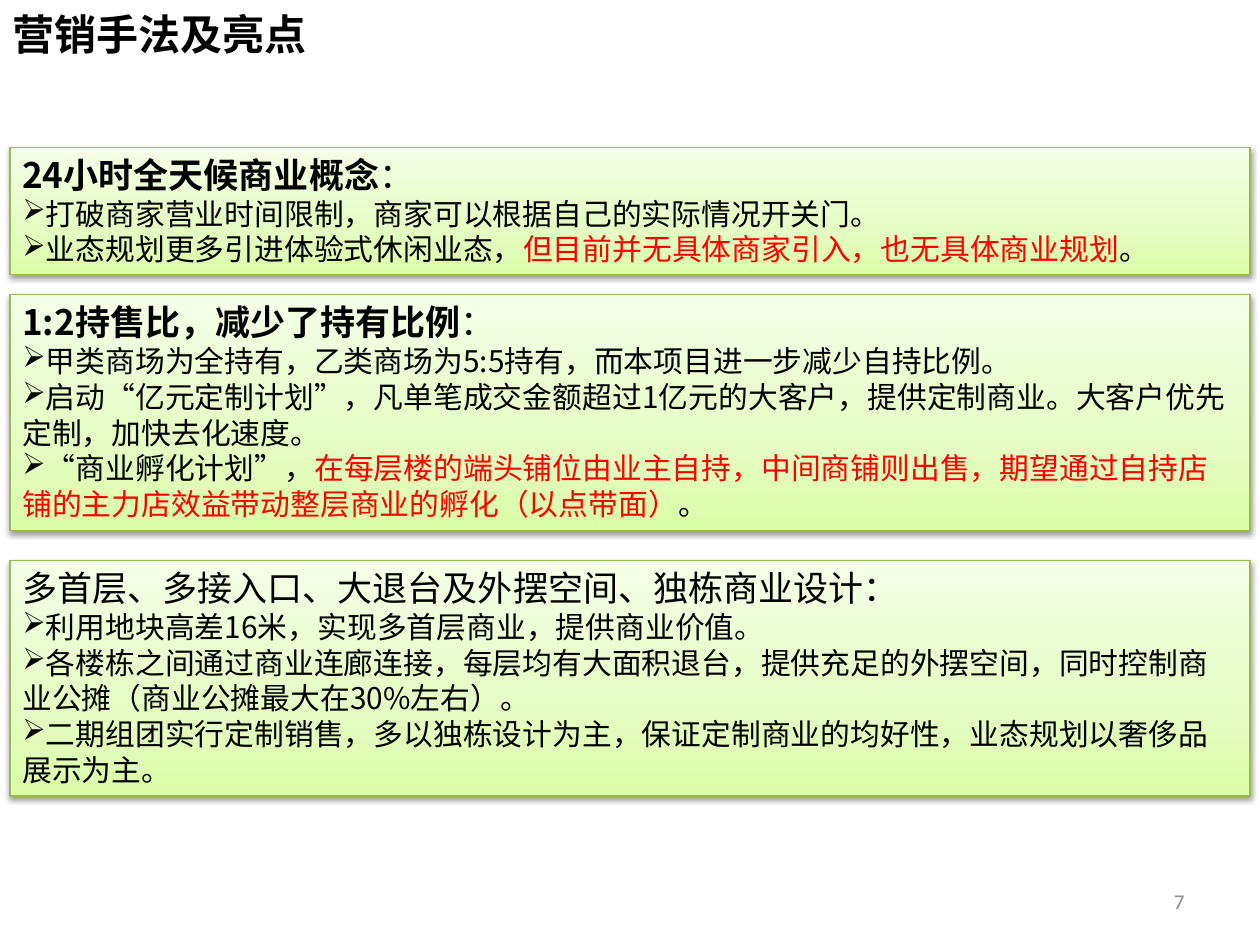
from lxml.etree import SubElement
from pptx import Presentation
from pptx.dml.color import RGBColor
from pptx.enum.shapes import MSO_SHAPE
from pptx.enum.text import MSO_ANCHOR, MSO_AUTO_SIZE, PP_ALIGN
from pptx.oxml import parse_xml
from pptx.oxml.ns import nsdecls, qn
from pptx.util import Cm, Pt

COLORS = {
    "text": "000000",
    "alert": "FF0000",
    "number": "8C8C8C",
    "border": "98B955",
    "shadow": "000000",
    "bottom": "DAFDA7",
    "middle": "E4FCC2",
    "top": "F5FFE7",
}
GRADIENT = [(0, "bottom"), (35, "middle"), (100, "top")]

PANELS = [
    (2.97, 2.57, [("24小时全天候商业概念", {"bold": True}), ("：", {})], [
        [("打破商家营业时间限制，商家可以根据自己的实际情况开关门。", {})],
        [("业态规划更多引进体验式休闲业态，", {}),
         ("但目前并无具体商家引入，也无具体商业规划", {"color": "alert"}),
         ("。", {})],
    ]),
    (5.94, 4.75, [("1:2持售比，减少了持有比例", {"bold": True}), ("：", {})], [
        [("甲类商场为全持有，乙类商场为5:5持有，而本项目进一步减少自持比例。", {})],
        [("启动“亿元定制计划”，凡单笔成交金额超过1亿元的大客户，提供定制商业。"
          "大客户优先定制，加快去化速度。", {})],
        [("“商业孵化计划”，", {}),
         ("在每层楼的端头铺位由业主自持，中间商铺则出售，"
          "期望通过自持店铺的主力店效益带动整层商业的孵化（以点带面）", {"color": "alert"}),
         ("。", {})],
    ]),
    (11.3, 4.75, [("多首层、多接入口、大退台及外摆空间、独栋商业设计：", {})], [
        [("利用地块高差16米，实现多首层商业，提供商业价值。", {})],
        [("各楼栋之间通过商业连廊连接，每层均有大面积退台，提供充足的外摆空间，"
          "同时控制商业公摊（商业公摊最大在30%左右）。", {})],
        [("二期组团实行定制销售，多以独栋设计为主，保证定制商业的均好性，"
          "业态规划以奢侈品展示为主。", {})],
    ]),
]


def add_span(para, text, size=17, color="text", bold=False, font="Noto Sans CJK SC"):
    span = para.add_run()
    span.text = text
    span.font.size = Pt(size)
    span.font.bold = bold
    span.font.color.rgb = RGBColor.from_string(COLORS[color])
    span.font.name = font
    SubElement(span.font._element, qn("a:ea"), typeface=font)


class SlideWriter:
    """Draws the elements of one slide in a shared style."""

    def __init__(self, page):
        self.page = page
        self.left = Cm(0.2)
        self.width = Cm(25)

    def label(self, left, top, width, height, text, align=PP_ALIGN.LEFT, **style):
        box = self.page.shapes.add_textbox(Cm(left), Cm(top), Cm(width), Cm(height))
        frame = box.text_frame
        frame.word_wrap = True
        frame.vertical_anchor = MSO_ANCHOR.MIDDLE
        para = frame.paragraphs[0]
        para.alignment = align
        add_span(para, text, **style)

    def decorate(self, box):
        stops = "".join(
            f'<a:gs pos="{place * 1000}"><a:srgbClr val="{COLORS[name]}"/></a:gs>'
            for place, name in GRADIENT
        )
        properties = box._element.spPr
        properties.find(qn("a:prstGeom")).addnext(parse_xml(
            f'<a:gradFill {nsdecls("a")} rotWithShape="1"><a:gsLst>{stops}</a:gsLst>'
            '<a:lin ang="16200000" scaled="0"/></a:gradFill>'
        ))
        box.line.color.rgb = RGBColor.from_string(COLORS["border"])
        box.line.width = Pt(0.75)
        box.shadow.inherit = False
        properties.find(qn("a:effectLst")).append(parse_xml(
            f'<a:outerShdw {nsdecls("a")} blurRad="40000" dist="20000" dir="5400000" '
            f'rotWithShape="0"><a:srgbClr val="{COLORS["shadow"]}">'
            '<a:alpha val="38000"/></a:srgbClr></a:outerShdw>'
        ))

    def panel(self, top, height, heading, points):
        box = self.page.shapes.add_shape(
            MSO_SHAPE.RECTANGLE, self.left, Cm(top), self.width, Cm(height)
        )
        self.decorate(box)
        frame = box.text_frame
        frame.word_wrap = True
        frame.auto_size = MSO_AUTO_SIZE.SHAPE_TO_FIT_TEXT
        frame.vertical_anchor = MSO_ANCHOR.TOP
        para = frame.paragraphs[0]
        para.alignment = PP_ALIGN.LEFT
        for text, style in heading:
            add_span(para, text, size=20, **style)
        for point in points:
            self.bullet(frame.add_paragraph(), point)

    def bullet(self, para, point):
        para.alignment = PP_ALIGN.LEFT
        SubElement(para._p.get_or_add_pPr(), qn("a:buChar"), char="➢")
        for text, style in point:
            add_span(para, text, **style)


def main():
    deck = Presentation()
    deck.slide_width, deck.slide_height = Cm(25.4), Cm(19.05)
    writer = SlideWriter(deck.slides.add_slide(deck.slide_layouts[6]))
    writer.label(18.2, 17.65, 5.93, 1.02, "7", align=PP_ALIGN.RIGHT,
                 size=12, color="number", font="Calibri")
    writer.label(0, -0.03, 8.33, 1.42, "营销手法及亮点", size=24, bold=True)
    for panel in PANELS:
        writer.panel(*panel)
    deck.save("out.pptx")


if __name__ == "__main__":
    main()
